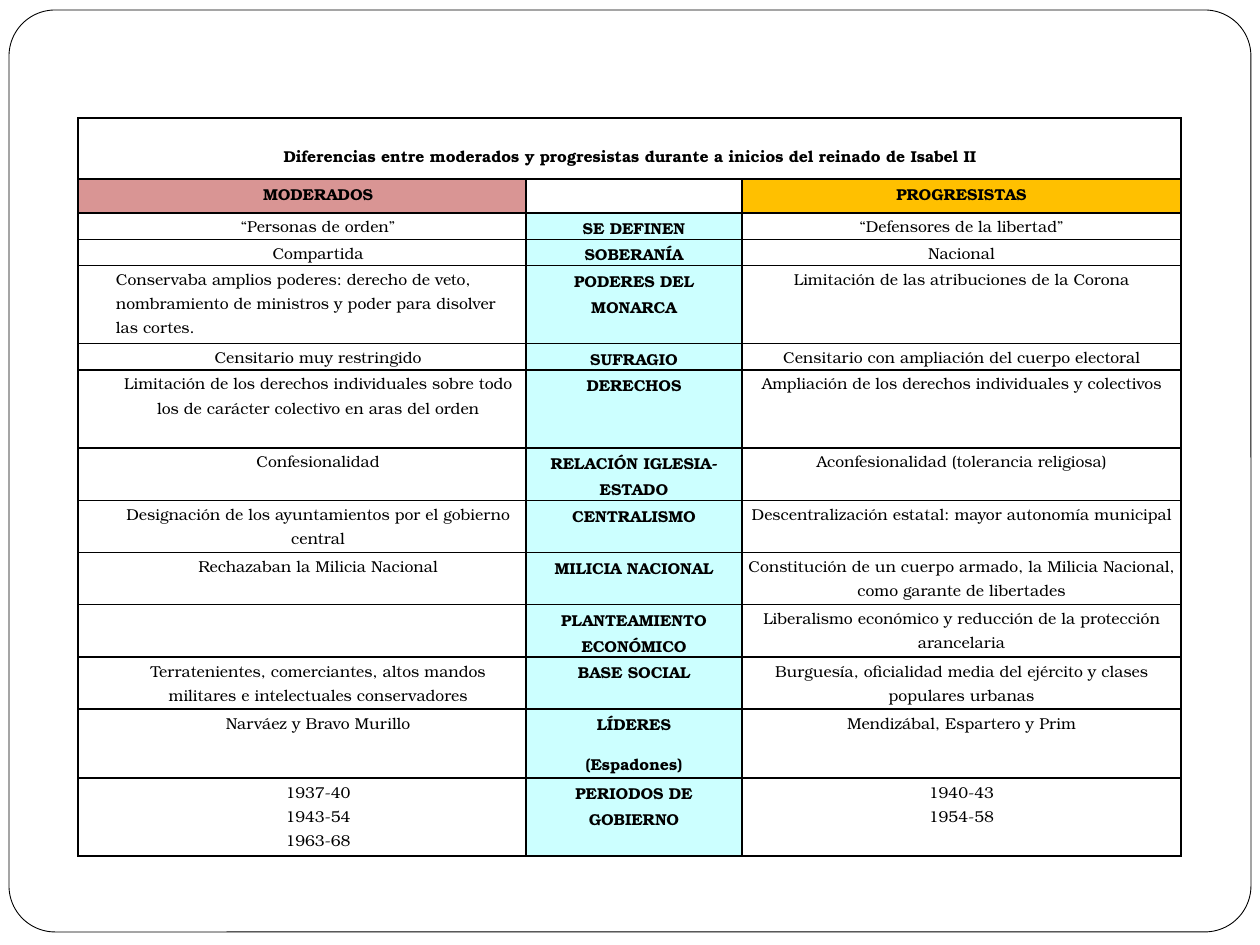
from lxml import etree
from pptx import Presentation
from pptx import util as u
from pptx.dml.color import RGBColor
from pptx.enum import shapes, text
from pptx.oxml import ns

PX = 914400 // 126
BLACK = RGBColor(0x00, 0x00, 0x00)
WHITE = RGBColor(0xFF, 0xFF, 0xFF)
ROSE = RGBColor(0xD9, 0x95, 0x94)
AMBER = RGBColor(0xFF, 0xC0, 0x00)
AQUA = RGBColor(0xCC, 0xFF, 0xFF)

TITLE = "Diferencias entre moderados y progresistas durante a inicios del reinado de Isabel II"
COLUMN_WIDTHS = [448, 216, 439]
TITLE_HEIGHT, HEADER_HEIGHT = 61, 34
# Row height, moderados, topic, progresistas
COMPARISON = [
    (26, "“Personas de orden”", "SE DEFINEN", "“Defensores de la libertad”"),
    (26, "Compartida", "SOBERANÍA", "Nacional"),
    (78, "Conservaba amplios poderes: derecho de veto, nombramiento de ministros "
         "y poder para disolver las cortes.",
     "PODERES DEL MONARCA", "Limitación de las atribuciones de la Corona"),
    (26, "Censitario muy restringido", "SUFRAGIO",
     "Censitario con ampliación del cuerpo electoral"),
    (78, "Limitación de los derechos individuales sobre todo los de carácter "
         "colectivo en aras del orden",
     "DERECHOS", "Ampliación de los derechos individuales y colectivos"),
    (52, "Confesionalidad", "RELACIÓN IGLESIA-ESTADO",
     "Aconfesionalidad (tolerancia religiosa)"),
    (52, "Designación de los ayuntamientos por el gobierno central", "CENTRALISMO",
     "Descentralización estatal: mayor autonomía municipal"),
    (52, "Rechazaban la Milicia Nacional", "MILICIA NACIONAL",
     "Constitución de un cuerpo armado, la Milicia Nacional, como garante de libertades"),
    (52, "", "PLANTEAMIENTO ECONÓMICO",
     "Liberalismo económico y reducción de la protección arancelaria"),
    (52, "Terratenientes, comerciantes, altos mandos militares e intelectuales "
         "conservadores",
     "BASE SOCIAL",
     "Burguesía, oficialidad media del ejército y clases populares urbanas"),
    (69, "Narváez y Bravo Murillo", "LÍDERES\n(Espadones)",
     "Mendizábal, Espartero y Prim"),
    (78, "1937-40\n1943-54\n1963-68", "PERIODOS DE GOBIERNO", "1940-43\n1954-58"),
]
LEFT_ALIGNED = "PODERES DEL MONARCA"
UNSPACED = "PERIODOS DE GOBIERNO"


class SlideBuilder:
    font_name = "TeX Gyre Bonum"
    font_size = u.Pt(9)
    line_spacing = 1.15
    border = u.Pt(1)

    def __init__(self, slide):
        self.slide = slide

    def frame(self, left, top, width, height, radius):
        panel = self.slide.shapes.add_shape(
            shapes.MSO_SHAPE.ROUNDED_RECTANGLE,
            left * PX, top * PX, width * PX, height * PX)
        panel.adjustments[0] = radius
        panel.shadow.inherit = False
        panel.fill.solid()
        panel.fill.fore_color.rgb = WHITE
        panel.line.color.rgb = BLACK
        panel.line.width = u.Pt(0.5)

    def table(self, left, top, widths, heights):
        grid = self.slide.shapes.add_table(
            len(heights), len(widths), left * PX, top * PX,
            sum(widths) * PX, sum(heights) * PX).table
        grid.first_row = grid.horz_banding = False
        for column, width in zip(grid.columns, widths):
            column.width = width * PX
        for row, height in zip(grid.rows, heights):
            row.height = height * PX
        return grid

    def cell(self, cell, words, fill=None, bold=False, indent=0, gap=0,
             align=text.PP_ALIGN.CENTER, top=0):
        cell.margin_left = cell.margin_right = 6 * PX
        cell.margin_top, cell.margin_bottom = top * PX, 0
        self.borders(cell)
        if fill is None:
            cell.fill.background()
        else:
            cell.fill.solid()
            cell.fill.fore_color.rgb = fill
        cell.text_frame.text = words
        for paragraph in cell.text_frame.paragraphs:
            paragraph.alignment = align
            paragraph.line_spacing = self.line_spacing
            paragraph.space_before = paragraph.space_after = u.Pt(gap)
            properties = paragraph._p.get_or_add_pPr()
            properties.set("marL", str(indent * PX))
            properties.set("indent", "0")
            for run in paragraph.runs:
                run.font.name = self.font_name
                run.font.size = self.font_size
                run.font.bold = bold
                run.font.color.rgb = BLACK
            if not paragraph.runs:
                # Keeps an empty cell as low as a line of text
                end = etree.SubElement(paragraph._p, ns.qn("a:endParaRPr"))
                end.set("sz", str(int(self.font_size.pt * 100)))

    def borders(self, cell):
        properties = cell._tc.get_or_add_tcPr()
        for side in ("a:lnL", "a:lnR", "a:lnT", "a:lnB"):
            line = etree.SubElement(properties, ns.qn(side), w=str(self.border))
            fill = etree.SubElement(line, ns.qn("a:solidFill"))
            etree.SubElement(fill, ns.qn("a:srgbClr"), val=str(BLACK))


def main():
    deck = Presentation()
    deck.slide_width, deck.slide_height = u.Inches(10), u.Inches(7.5)
    builder = SlideBuilder(deck.slides.add_slide(deck.slide_layouts[6]))

    # Rounded page frame
    builder.frame(9, 10, 1242, 922, 0.05)

    # Comparison table
    heights = [TITLE_HEIGHT, HEADER_HEIGHT] + [row[0] for row in COMPARISON]
    grid = builder.table(78, 118, COLUMN_WIDTHS, heights)

    # Title across all columns
    for column in range(3):
        builder.cell(grid.cell(0, column), TITLE if column == 0 else "",
                     bold=True, top=23)
    grid.cell(0, 0).merge(grid.cell(0, 2))

    # Column headings
    builder.cell(grid.cell(1, 0), "MODERADOS", ROSE, bold=True, indent=32)
    builder.cell(grid.cell(1, 1), "")
    builder.cell(grid.cell(1, 2), "PROGRESISTAS", AMBER, bold=True)

    # One row per topic
    for index, (_, moderados, topic, progresistas) in enumerate(COMPARISON, start=2):
        gap = 0 if topic == UNSPACED else 4
        align = (text.PP_ALIGN.LEFT if topic == LEFT_ALIGNED
                 else text.PP_ALIGN.CENTER)
        builder.cell(grid.cell(index, 0), moderados, indent=32, gap=gap, align=align)
        builder.cell(grid.cell(index, 1), topic, AQUA, bold=True, gap=gap)
        builder.cell(grid.cell(index, 2), progresistas, gap=gap)

    deck.save("out.pptx")


if __name__ == "__main__":
    main()
